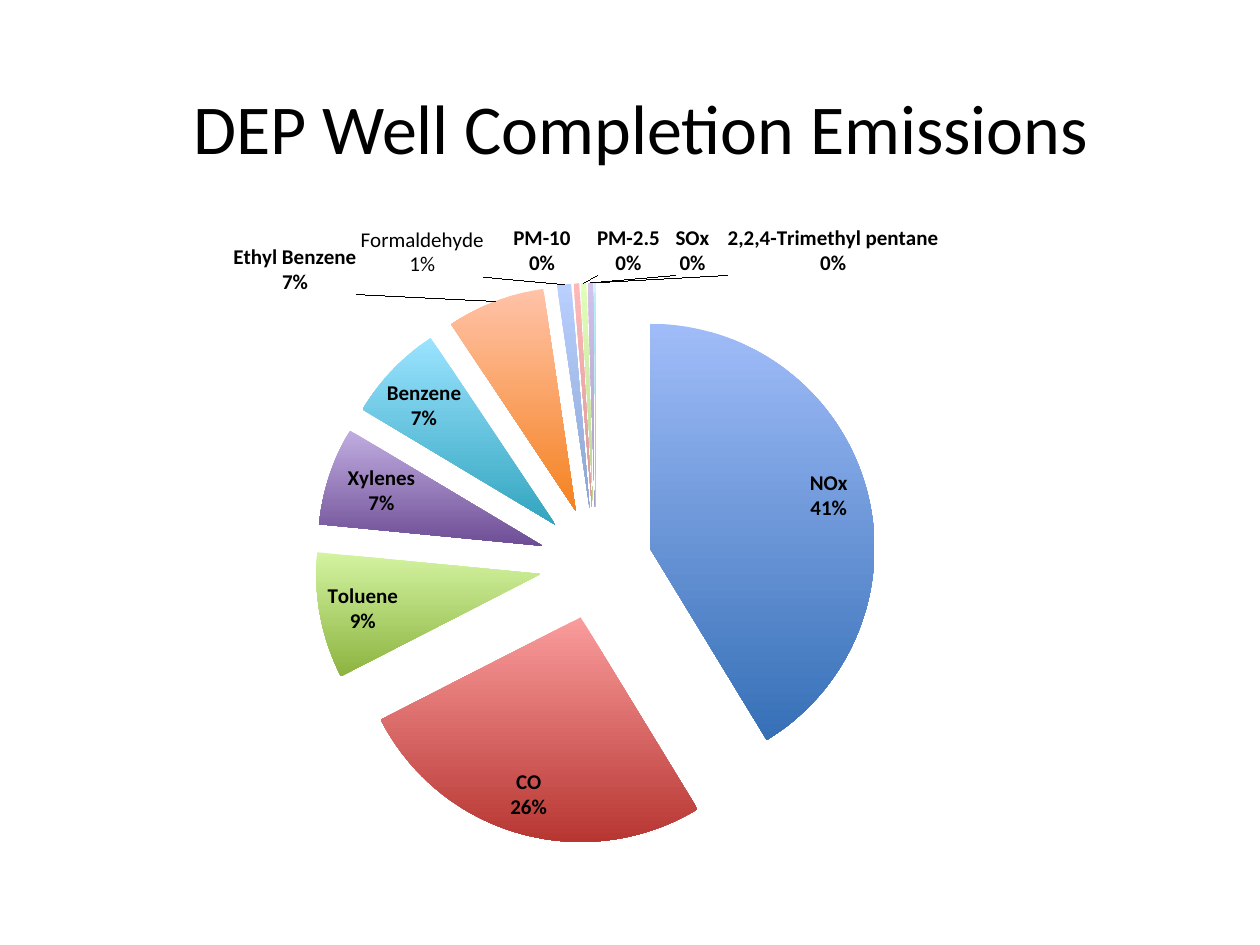
from dataclasses import dataclass

from lxml import etree
from pptx import Presentation
from pptx.chart.data import CategoryChartData
from pptx.dml.color import RGBColor
from pptx.enum.chart import XL_CHART_TYPE, XL_LABEL_POSITION
from pptx.enum.text import MSO_ANCHOR, PP_ALIGN
from pptx.oxml.ns import qn
from pptx.util import Inches, Pt

PIE = XL_CHART_TYPE.PIE
INSIDE = XL_LABEL_POSITION.INSIDE_END
OUTSIDE = XL_LABEL_POSITION.OUTSIDE_END
MIDDLE = MSO_ANCHOR.MIDDLE
CENTER = PP_ALIGN.CENTER


@dataclass(frozen=True)
class Theme:
    font: str = "Calibri"
    text: RGBColor = RGBColor(0, 0, 0)
    title_size: Pt = Pt(40)
    label_size: Pt = Pt(12)


theme = Theme()
EXPLOSION = 25

# fmt: off
SLICES = [
    ("NOx", 41, "A0BCF8", "3670B7", INSIDE, (-0.01, -0.03)),
    ("CO", 26, "FA9C9C", "B73632", INSIDE, (-0.01, -0.01)),
    ("Toluene", 9, "D3F3A0", "8DB441", INSIDE, (0, 0.03)),
    ("Xylenes", 7, "C0ADE0", "6E4D95", INSIDE, (0.01, -0.02)),
    ("Benzene", 7, "9AE3FF", "33A5BF", INSIDE, (-0.01, 0.01)),
    ("Ethyl Benzene", 7, "FFC3A8", "F58220", OUTSIDE, (-0.12, 0)),
    ("Formaldehyde", 1, "B9D0FF", "8CA6D2", OUTSIDE, (-0.07, 0)),
    ("PM-10", 0.4, "FFB8B8", "D69A98", OUTSIDE, (-0.03, 0)),
    ("PM-2.5", 0.4, "E2FFB8", "B9CF96", OUTSIDE, (0.04, 0)),
    ("SOx", 0.4, "D2C2EC", "A99BBD", OUTSIDE, (0.09, 0)),
    ("2,2,4-Trimethyl pentane", 0.1, "B2EEFF", "91C3D5", OUTSIDE, (0.21, 0)),
]
# fmt: on


def set_layout(parent, values, inner=False):
    for old in parent.findall(qn("c:layout")):
        parent.remove(old)
    layout = etree.Element(qn("c:layout"))
    manual = etree.SubElement(layout, qn("c:manualLayout"))
    if inner:
        values = {"layoutTarget": "inner", "xMode": "edge", "yMode": "edge", **values}
    for name, value in values.items():
        etree.SubElement(manual, qn("c:" + name)).set("val", str(value))
    parent.insert(0 if inner else 1, layout)


def show_name_and_percent(labels):
    for name, on in (("showVal", 0), ("showCatName", 1), ("showPercent", 1)):
        labels.find(qn("c:" + name)).set("val", str(on))
    separator = etree.Element(qn("c:separator"))
    separator.text = "\n"
    labels.find(qn("c:showPercent")).getnext().addnext(separator)


prs = Presentation()
prs.slide_width, prs.slide_height = Inches(10), Inches(7.5)
s = prs.slides.add_slide(prs.slide_layouts[5])

title = s.shapes.title
title.left, title.top = Inches(0.5), Inches(0.27)
title.width, title.height = Inches(9.17), Inches(1.47)
tf = title.text_frame
tf.text = "DEP Well Completion Emissions"
tf.vertical_anchor = MIDDLE
p = tf.paragraphs[0]
p.alignment = CENTER
r = p.runs[0]
r.font.name, r.font.size = theme.font, theme.title_size
r.font.color.rgb = theme.text

data = CategoryChartData()
data.categories = [row[0] for row in SLICES]
data.add_series("Series 1", [row[1] for row in SLICES])
chart = s.shapes.add_chart(
    PIE, Inches(0.5), Inches(1.75), Inches(9), Inches(4.95), data
).chart
chart.has_title = False
chart.has_legend = False
chart.font.name, chart.font.size = theme.font, theme.label_size
chart.font.color.rgb = theme.text
plot = chart.plots[0]
plot.vary_by_categories = True
plot_area = chart.element.find(".//" + qn("c:plotArea"))
set_layout(plot_area, {"x": 0.22, "y": 0.1, "w": 0.5, "h": 0.9}, inner=True)

series = plot.series[0]
explosion = etree.Element(qn("c:explosion"))
explosion.set("val", str(EXPLOSION))
series._element.find(qn("c:tx")).addnext(explosion)
labels = series.data_labels
labels.font.bold = True
show_name_and_percent(labels._element)

for i, (name, value, light, dark, position, (dx, dy)) in enumerate(SLICES):
    point = series.points[i]
    fill = point.format.fill
    fill.gradient()
    fill.gradient_angle = 270
    for stop, color in zip(fill.gradient_stops, (light, dark)):
        stop.color.rgb = RGBColor.from_string(color)

    label = point.data_label
    label.position = position
    label.font.name, label.font.size = theme.font, theme.label_size
    label.font.bold = name != "Formaldehyde"
    label.font.color.rgb = theme.text
    dlbl = series._element.findall(".//" + qn("c:dLbl"))[i]
    show_name_and_percent(dlbl)
    set_layout(dlbl, {"x": dx, "y": dy})

prs.save("out.pptx")
